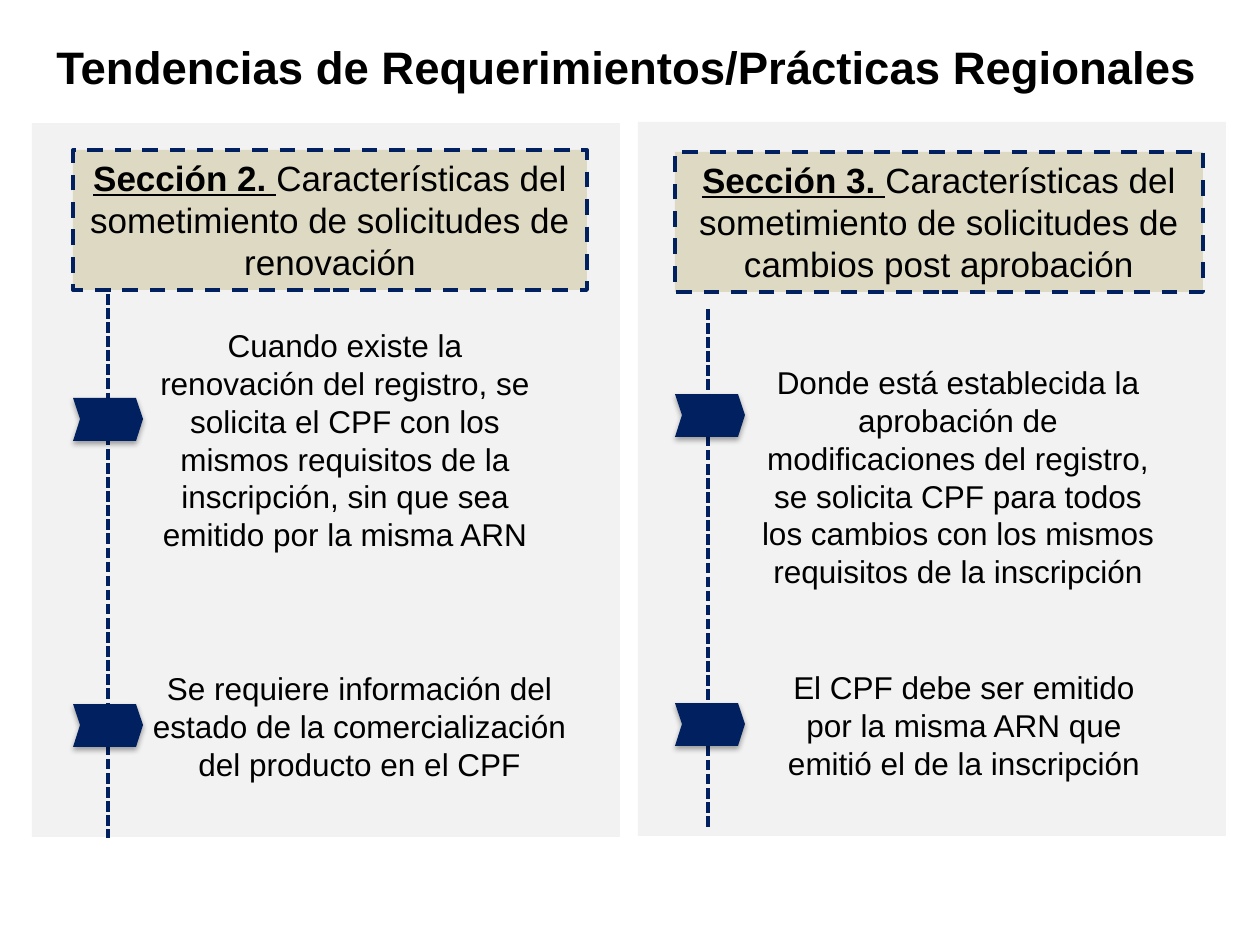
from dataclasses import dataclass

import pptx
import pptx.dml.color
import pptx.enum.dml
import pptx.enum.shapes
import pptx.enum.text
import pptx.oxml
import pptx.util

EMU_PER_PX = 914400 / 126
NAVY, PANEL_GREY, TAN, BLACK = "002060", "F2F2F2", "DDD9C3", "000000"
DASH = pptx.enum.dml.MSO_LINE
NS = 'xmlns:a="http://schemas.openxmlformats.org/drawingml/2006/main"'
MARKER_SHADOW = (
    f'<a:effectLst {NS}><a:outerShdw blurRad="39370" dist="22860" dir="5400000" '
    'rotWithShape="0"><a:srgbClr val="000000"><a:alpha val="35000"/></a:srgbClr>'
    "</a:outerShdw></a:effectLst>"
)


@dataclass(frozen=True)
class Box:
    left: int
    top: int
    width: int
    height: int


@dataclass(frozen=True)
class Point:
    marker: tuple[int, int]
    box: Box
    text: str


@dataclass(frozen=True)
class Section:
    panel: Box
    heading: Box
    label: str
    topic: str
    line_x: int
    line_top: int
    line_bottom: int
    points: tuple[Point, ...]


SECTIONS = (
    Section(
        Box(32, 123, 588, 714), Box(73, 150, 514, 140), "Sección 2. ",
        "Características del sometimiento de solicitudes de renovación",
        108, 294, 838,
        (
            Point((73, 398), Box(135, 320, 420, 242),
                  "Cuando existe la renovación del registro, se solicita el CPF con los "
                  "mismos requisitos de la inscripción, sin que sea emitido por la misma ARN"),
            Point((73, 704), Box(137, 663, 445, 127),
                  "Se requiere información del estado de la comercialización del producto "
                  "en el CPF"),
        ),
    ),
    Section(
        Box(638, 122, 588, 714), Box(675, 152, 528, 140), "Sección 3. ",
        "Características del sometimiento de solicitudes de cambios post aprobación",
        708, 309, 830,
        (
            Point((675, 394), Box(748, 357, 420, 242),
                  "Donde está establecida la aprobación de modificaciones del registro, se "
                  "solicita CPF para todos los cambios con los mismos requisitos de la "
                  "inscripción"),
            Point((675, 703), Box(755, 662, 418, 127),
                  "El CPF debe ser emitido por la misma ARN que emitió el de la inscripción"),
        ),
    ),
)


def px(length: int) -> pptx.util.Emu:
    return pptx.util.Emu(round(length * EMU_PER_PX))


def place(box: Box) -> tuple:
    return px(box.left), px(box.top), px(box.width), px(box.height)


def rgb(color: str) -> pptx.dml.color.RGBColor:
    return pptx.dml.color.RGBColor.from_string(color)


def fill(shape, color: str) -> None:
    shape.fill.solid()
    shape.fill.fore_color.rgb = rgb(color)


def style_line(line, points: float, dash) -> None:
    line.color.rgb = rgb(NAVY)
    line.width = pptx.util.Pt(points)
    line.dash_style = dash


def style_paragraph(paragraph, size: int, bold: bool | None = None) -> None:
    paragraph.alignment = pptx.enum.text.PP_ALIGN.CENTER
    font = paragraph.font
    font.name, font.size, font.bold = "Arial", pptx.util.Pt(size), bold
    font.color.rgb = rgb(BLACK)


def add_rect(shapes, box: Box, color: str):
    rect = shapes.add_shape(pptx.enum.shapes.MSO_SHAPE.RECTANGLE, *place(box))
    rect.shadow.inherit = False
    fill(rect, color)
    rect.line.fill.background()
    return rect


def add_text(shapes, box: Box, text: str, size: int, bold: bool | None = None):
    frame = shapes.add_textbox(*place(box)).text_frame
    frame.word_wrap = True
    frame.text = text
    style_paragraph(frame.paragraphs[0], size, bold)
    return frame


def add_heading(shapes, section: Section) -> None:
    heading = add_rect(shapes, section.heading, TAN)
    style_line(heading.line, 2.25, DASH.DASH)
    frame = heading.text_frame
    frame.word_wrap = True
    frame.vertical_anchor = pptx.enum.text.MSO_ANCHOR.TOP
    paragraph = frame.paragraphs[0]
    style_paragraph(paragraph, 20)
    label, topic = paragraph.add_run(), paragraph.add_run()
    label.text, topic.text = section.label, section.topic
    label.font.bold = label.font.underline = True
    for run in (label, topic):
        run.font.color.rgb = rgb(BLACK)


def add_marker(shapes, left: int, top: int) -> None:
    outline = ((70, 21), (63, 0), (0, 0), (7, 21), (0, 43), (63, 43))
    corners = [(left + x, top + y) for x, y in outline]
    builder = shapes.build_freeform(*corners[0], scale=EMU_PER_PX)
    builder.add_line_segments(corners[1:], close=True)
    marker = builder.convert_to_shape()
    fill(marker, NAVY)
    marker.line.fill.background()
    marker._element.spPr.append(pptx.oxml.parse_xml(MARKER_SHADOW))


def add_timeline(shapes, section: Section) -> None:
    timeline = shapes.add_group_shape().shapes
    x = px(section.line_x)
    line = timeline.add_connector(
        pptx.enum.shapes.MSO_CONNECTOR.STRAIGHT,
        x, px(section.line_top), x, px(section.line_bottom))
    style_line(line.line, 2, DASH.SQUARE_DOT)
    line._element.spPr.append(pptx.oxml.parse_xml(f"<a:effectLst {NS}/>"))
    for point in section.points:
        add_marker(timeline, *point.marker)


def main() -> None:
    deck = pptx.Presentation()
    deck.slide_width, deck.slide_height = px(1260), px(945)
    shapes = deck.slides.add_slide(deck.slide_layouts[6]).shapes

    # Section panels with their timelines
    for section in SECTIONS:
        add_rect(shapes, section.panel, PANEL_GREY)
        add_heading(shapes, section)
        add_timeline(shapes, section)
        for point in section.points:
            add_text(shapes, point.box, point.text, 18)

    # Title
    title = add_text(shapes, Box(-3, 38, 1260, 57),
                     "Tendencias de Requerimientos/Prácticas Regionales", 26, True)
    title.vertical_anchor = pptx.enum.text.MSO_ANCHOR.MIDDLE

    deck.save("out.pptx")


if __name__ == "__main__":
    main()
